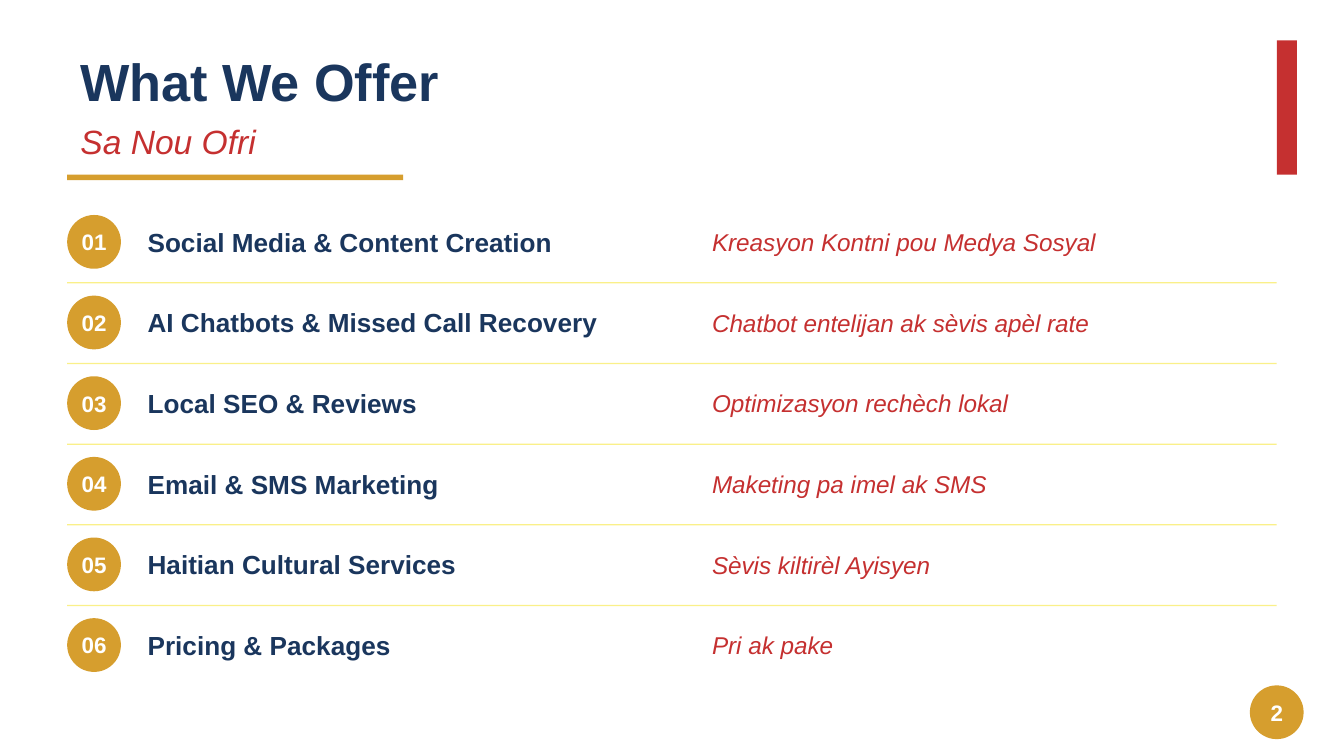
"""Build the bilingual "What We Offer" slide."""
from pptx import Presentation
from pptx.dml.color import RGBColor
from pptx.enum.shapes import MSO_SHAPE
from pptx.enum.text import MSO_ANCHOR, PP_ALIGN
from pptx.util import Pt

RECT, OVAL = MSO_SHAPE.RECTANGLE, MSO_SHAPE.OVAL
MIDDLE = MSO_ANCHOR.MIDDLE
LEFT, CENTER = PP_ALIGN.LEFT, PP_ALIGN.CENTER

NAVY = RGBColor(0x1A, 0x36, 0x5D)
RED = RGBColor(0xC5, 0x30, 0x30)
GOLD = RGBColor(0xD6, 0x9E, 0x2E)
YELLOW = RGBColor(0xFA, 0xF0, 0x89)
WHITE = RGBColor(0xFF, 0xFF, 0xFF)

FONT = "Arial"
TITLE = "What We Offer"
SUBTITLE = "Sa Nou Ofri"
PAGE = "2"
SERVICES = [
    ("Social Media & Content Creation", "Kreasyon Kontni pou Medya Sosyal"),
    ("AI Chatbots & Missed Call Recovery", "Chatbot entelijan ak sèvis apèl rate"),
    ("Local SEO & Reviews", "Optimizasyon rechèch lokal"),
    ("Email & SMS Marketing", "Maketing pa imel ak SMS"),
    ("Haitian Cultural Services", "Sèvis kiltirèl Ayisyen"),
    ("Pricing & Packages", "Pri ak pake"),
]

PX = 4572
WIDTH, HEIGHT = 2000, 1125
MARGIN = 100
BADGE = 80
ROW_TOP, ROW_STEP = 320, 120
RULE_OFFSET = 100


def px(*lengths):
    return [n * PX for n in lengths]


def add_block(s, kind, box, color):
    sp = s.shapes.add_shape(kind, *px(*box))
    sp.shadow.inherit = False
    sp.fill.solid()
    sp.fill.fore_color.rgb = color
    sp.line.fill.background()


def add_text(s, text, box, size, color, bold=False, italic=False, align=LEFT):
    tf = s.shapes.add_textbox(*px(*box)).text_frame
    tf.word_wrap = True
    tf.vertical_anchor = MIDDLE
    p = tf.paragraphs[0]
    p.text = text
    p.alignment = align
    font = p.runs[0].font
    font.name, font.size, font.color.rgb = FONT, Pt(size), color
    font.bold, font.italic = bold, italic


def add_badge(s, text, x, y):
    box = (x, y, BADGE, BADGE)
    add_block(s, OVAL, box, GOLD)
    add_text(s, text, box, 12, WHITE, bold=True, align=CENTER)


def main():
    prs = Presentation()
    prs.slide_width, prs.slide_height = px(WIDTH, HEIGHT)
    s = prs.slides.add_slide(prs.slide_layouts[6])
    s.background.fill.solid()
    s.background.fill.fore_color.rgb = WHITE

    add_text(s, TITLE, (MARGIN, 60, 900, 120), 28, NAVY, bold=True)
    add_text(s, SUBTITLE, (MARGIN, 170, 900, 80), 18, RED, italic=True)
    add_block(s, RECT, (MARGIN, 260, 500, 8), GOLD)

    for i, (english, creole) in enumerate(SERVICES):
        y = ROW_TOP + i * ROW_STEP
        add_badge(s, f"{i + 1:02d}", MARGIN, y)
        add_text(s, english, (200, y, 800, BADGE), 14, NAVY, bold=True)
        add_text(s, creole, (1040, y, 860, BADGE), 13, RED, italic=True)
        if i < len(SERVICES) - 1:
            rule = (MARGIN, y + RULE_OFFSET, WIDTH - 2 * MARGIN, 2)
            add_block(s, RECT, rule, YELLOW)

    add_block(s, RECT, (WIDTH - MARGIN, 60, 30, 200), RED)
    add_badge(s, PAGE, 1860, 1020)
    prs.save("out.pptx")


if __name__ == "__main__":
    main()
